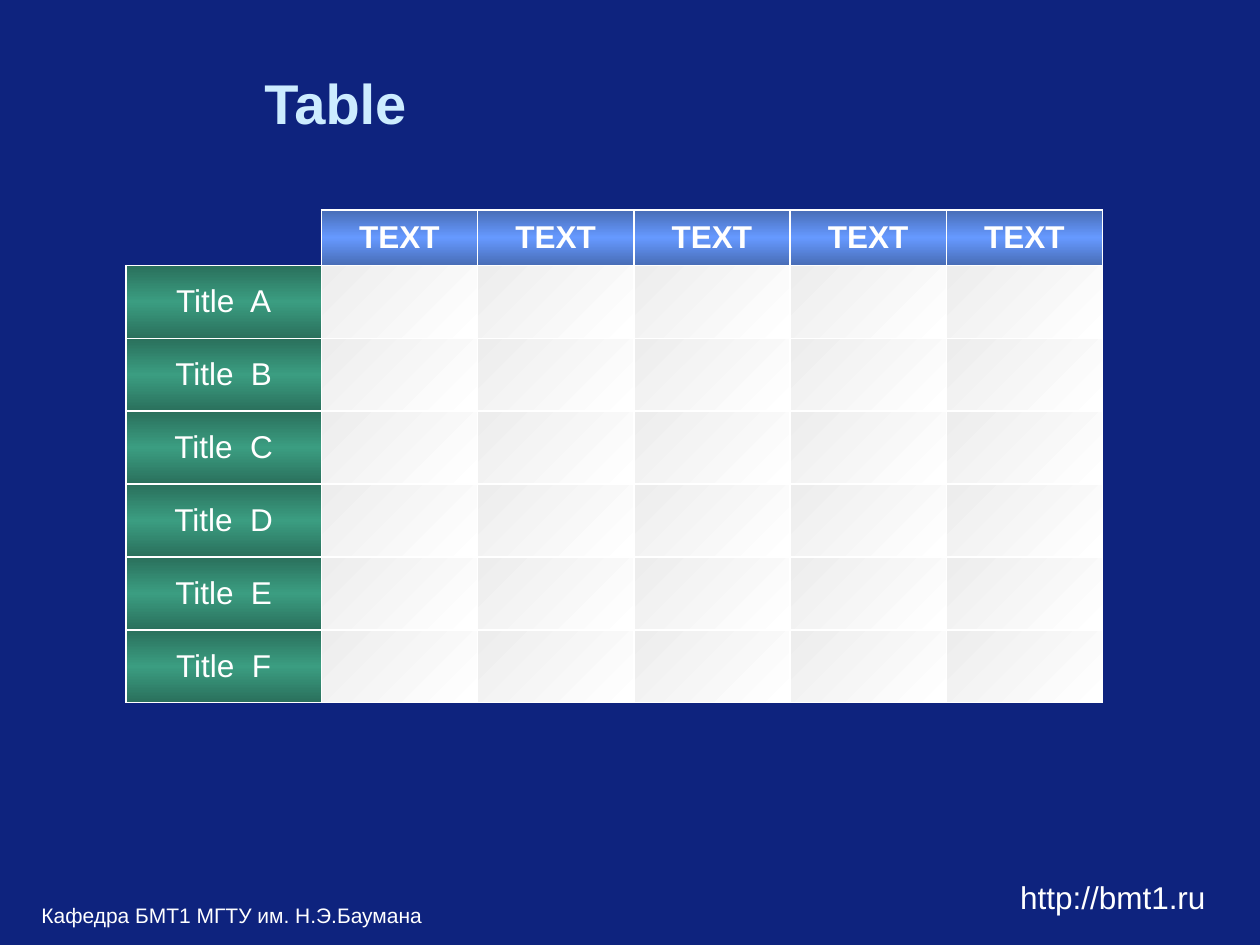
from lxml.etree import SubElement
from pptx import Presentation
from pptx.dml.color import RGBColor
from pptx.enum.text import MSO_ANCHOR, PP_ALIGN
from pptx.oxml.ns import qn
from pptx.util import Pt

COLORS = {
    "background": "0E237E",
    "title": "CCECFF",
    "white": "FFFFFF",
    "header": "6699FF",
    "row_title": "3B9D81",
}
FONT = "Arial"
HEADERS = ["TEXT"] * 5
ROW_TITLES = [f"Title  {letter}" for letter in "ABCDEF"]
HEADER_HEIGHT, ROW_HEIGHT = 31.7, 41.65
TITLE_WIDTH, COLUMN_WIDTH = 111.6, 89.3
BAND = [(0, 46275), (50, None), (100, 46275)]
DIAGONAL = [(0, 84706), (100, None)]


def style_paragraph(paragraph, size, color, bold=False, align=PP_ALIGN.LEFT):
    paragraph.alignment = align
    font = paragraph.font
    font.name, font.size, font.bold = FONT, Pt(size), bold
    font.color.rgb = RGBColor.from_string(COLORS[color])


def add_label(slide, text, box, size, color, bold=False,
              align=PP_ALIGN.LEFT, anchor=MSO_ANCHOR.TOP):
    frame = slide.shapes.add_textbox(*map(Pt, box)).text_frame
    frame.word_wrap = True
    frame.vertical_anchor = anchor
    frame.text = text
    style_paragraph(frame.paragraphs[0], size, color, bold, align)


def add_color(parent, color, shade=None):
    rgb = SubElement(parent, qn("a:srgbClr"), val=COLORS[color])
    if shade:
        SubElement(rgb, qn("a:shade"), val=str(shade))


def set_borders(cell, sides):
    properties = cell._tc.get_or_add_tcPr()
    for side in "LRTB":
        visible = side in sides
        line = SubElement(properties, qn(f"a:ln{side}"), w=str(Pt(1 if visible else 0)))
        if visible:
            add_color(SubElement(line, qn("a:solidFill")), "white")
        else:
            SubElement(line, qn("a:noFill"))


def set_gradient(cell, color, stops, angle):
    gradient = SubElement(cell._tc.get_or_add_tcPr(), qn("a:gradFill"), rotWithShape="1")
    stop_list = SubElement(gradient, qn("a:gsLst"))
    for position, shade in stops:
        stop = SubElement(stop_list, qn("a:gs"), pos=str(position * 1000))
        add_color(stop, color, shade)
    SubElement(gradient, qn("a:lin"), ang=str(angle * 60000), scaled="1")


def fill_cell(cell, text, color, stops, angle, bold=False):
    set_borders(cell, "LRTB")
    set_gradient(cell, color, stops, angle)
    cell.vertical_anchor = MSO_ANCHOR.MIDDLE
    cell.text = text
    style_paragraph(cell.text_frame.paragraphs[0], 18, "white", bold, PP_ALIGN.CENTER)


def add_grid(slide):
    widths = [TITLE_WIDTH] + [COLUMN_WIDTH] * len(HEADERS)
    heights = [HEADER_HEIGHT] + [ROW_HEIGHT] * len(ROW_TITLES)
    grid = slide.shapes.add_table(
        len(heights), len(widths), Pt(72), Pt(120), Pt(sum(widths)), Pt(sum(heights))
    ).table
    grid.first_row = grid.horz_banding = False
    for column, width in zip(grid.columns, widths):
        column.width = Pt(width)
    for row, height in zip(grid.rows, heights):
        row.height = Pt(height)

    corner = grid.cell(0, 0)
    set_borders(corner, "RB")
    corner.fill.background()
    for column, header in enumerate(HEADERS, 1):
        fill_cell(grid.cell(0, column), header, "header", BAND, 90, bold=True)
    for row, row_title in enumerate(ROW_TITLES, 1):
        fill_cell(grid.cell(row, 0), row_title, "row_title", BAND, 90)
        for column in range(1, len(widths)):
            fill_cell(grid.cell(row, column), "", "white", DIAGONAL, 45)


def main():
    presentation = Presentation()
    presentation.slide_width, presentation.slide_height = Pt(720), Pt(540)
    slide = presentation.slides.add_slide(presentation.slide_layouts[6])
    background = slide.background.fill
    background.solid()
    background.fore_color.rgb = RGBColor.from_string(COLORS["background"])

    add_label(slide, "Table", (144, 36, 546, 44.6), 32, "title",
              bold=True, anchor=MSO_ANCHOR.MIDDLE)
    add_grid(slide)
    add_label(slide, "Кафедра БМТ1 МГТУ им. Н.Э.Баумана", (16.6, 512, 422, 39.6), 12, "white")
    add_label(slide, "http://bmt1.ru", (468, 498.2, 228, 18), 18, "white", align=PP_ALIGN.RIGHT)
    presentation.save("out.pptx")


if __name__ == "__main__":
    main()
